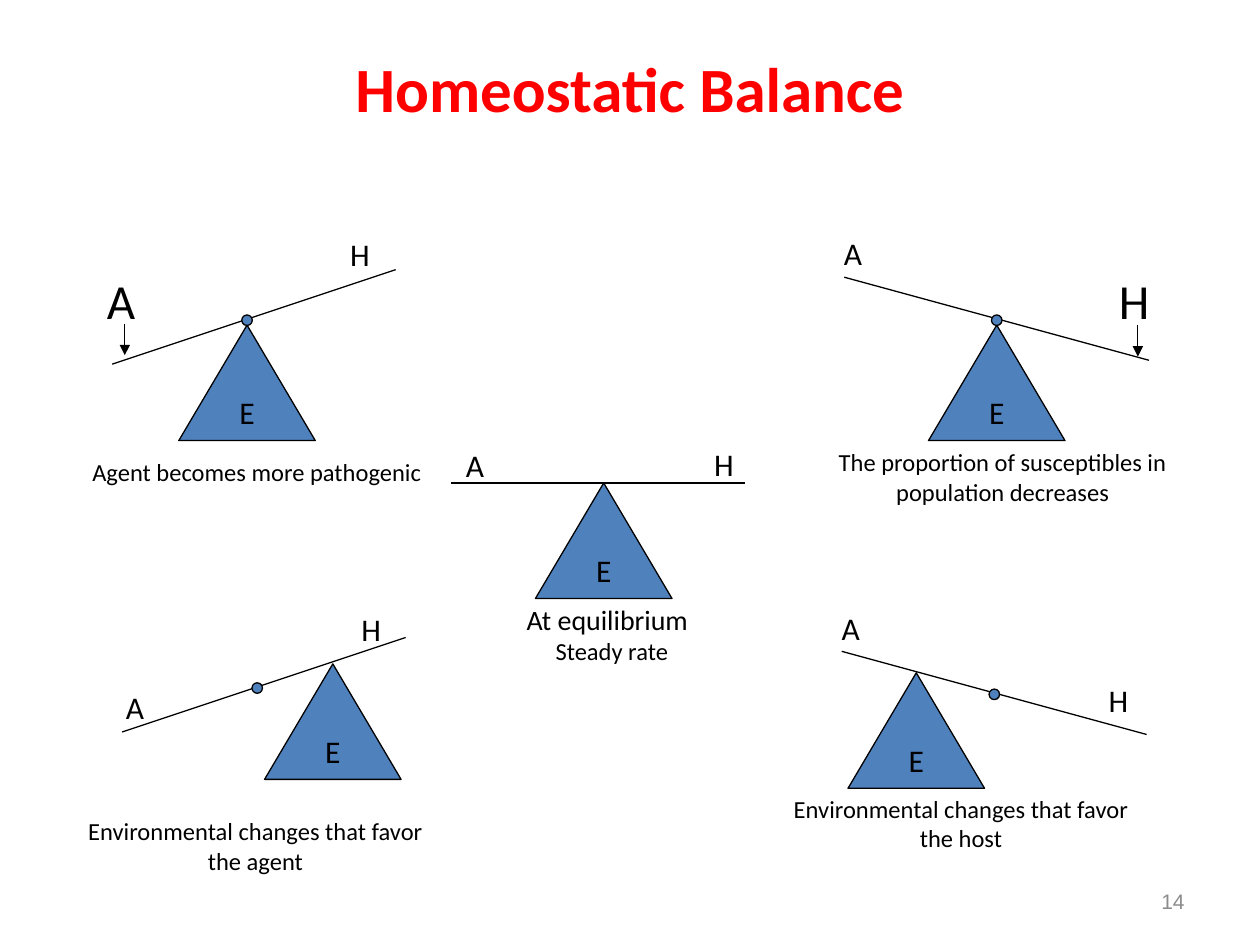
from lxml.etree import SubElement
from pptx import Presentation
from pptx.dml.color import RGBColor
from pptx.enum.shapes import MSO_CONNECTOR as Connector, MSO_SHAPE as Shape
from pptx.enum.text import MSO_ANCHOR as Anchor, MSO_AUTO_SIZE as AutoSize, PP_ALIGN as Align
from pptx.oxml.ns import qn
from pptx.util import Pt

COLORS = {"title": "FF0000", "ink": "000000", "fulcrum": "4F81BD", "number": "8C8C8C"}

# Beam run and rise for each tilt, in points
TILTS = {"agent": (162, -54), "level": (168, 0), "host": (174.2, 47.5)}
LABEL_SIZES = {("A", 18): (26.6, 28.8), ("H", 18): (27.4, 28.8),
               ("A", 28): (33.1, 41), ("H", 28): (34.6, 41)}

# Positions are left, top; labels are letter, left, top, size; captions are
# left, top, width and lines of text, size, alignment
BALANCES = [
    {"triangle": (306, 276), "tilt": "level", "beam": (258, 276),
     "labels": [("A", 259.2, 251.3, 18), ("H", 401, 250.6, 18)],
     "caption": (293.8, 340.6, 111.6,
                 [("At equilibrium", 16, Align.LEFT), ("Steady rate", 14, Align.CENTER)])},
    {"triangle": (530.6, 185.8), "tilt": "host", "beam": (482.4, 158.4),
     "pivot": (566.6, 180), "arrow": (650.2, 185.8),
     "labels": [("A", 475.2, 130.3, 18), ("H", 632.2, 151.2, 28)],
     "caption": (468, 252, 210, [("The proportion of susceptibles in population decreases",
                                  14, Align.CENTER)])},
    {"triangle": (151.2, 379.4), "tilt": "agent", "beam": (69.8, 418.3),
     "pivot": (144, 390.2),
     "labels": [("A", 64.8, 389.5, 18), ("H", 199.4, 344.9, 18)],
     "caption": (41, 463, 210, [("Environmental changes that favor the agent",
                                 14, Align.CENTER)])},
    {"triangle": (484.6, 384.5), "tilt": "host", "beam": (481, 372.2),
     "pivot": (565.2, 393.8),
     "labels": [("A", 473.8, 344.2, 18), ("H", 626.4, 385.9, 18)],
     "caption": (444.2, 450, 210, [("Environmental changes that favor the host",
                                    14, Align.CENTER)])},
    {"triangle": (102.2, 185.8), "tilt": "agent", "beam": (64.1, 208.1),
     "pivot": (138.2, 180), "arrow": (71.3, 185),
     "labels": [("A", 54, 151.2, 28), ("H", 193, 131, 18)],
     "caption": (41.8, 257.8, 210, [("Agent becomes more pathogenic", 14, Align.CENTER)])},
]


def color(name):
    return RGBColor.from_string(COLORS[name])


def write(para, text, size, ink="ink", align=Align.LEFT, name="Calibri", bold=False):
    para.alignment = align
    span = para.add_run()
    span.text = text
    span.font.color.rgb = color(ink)
    for key, value in {"size": Pt(size), "name": name, "bold": bold}.items():
        setattr(span.font, key, value)


def add_text(shapes, left, top, width, height, lines, wrap=True):
    box = shapes.add_textbox(Pt(left), Pt(top), Pt(width), Pt(height))
    frame = box.text_frame
    for key, value in {"word_wrap": wrap, "auto_size": AutoSize.SHAPE_TO_FIT_TEXT}.items():
        setattr(frame, key, value)
    for index, (text, size, align) in enumerate(lines):
        para = frame.add_paragraph() if index else frame.paragraphs[0]
        write(para, text, size, align=align)


def add_solid(shapes, kind, left, top, width, height):
    solid = shapes.add_shape(kind, Pt(left), Pt(top), Pt(width), Pt(height))
    solid.shadow.inherit = False
    solid.fill.solid()
    solid.fill.fore_color.rgb = color("fulcrum")
    solid.line.color.rgb = color("ink")
    solid.line.width = Pt(0.75)
    return solid


def add_line(shapes, left, top, run, rise, arrow=False):
    line = shapes.add_connector(Connector.STRAIGHT, Pt(left), Pt(top),
                                Pt(left + run), Pt(top + rise))
    line.line.color.rgb = color("ink")
    line.line.width = Pt(0.75)
    if arrow:
        SubElement(line.line._get_or_add_ln(), qn("a:tailEnd"), type="triangle")
    SubElement(line._element.spPr, qn("a:effectLst"))


def add_balance(page, balance):
    shapes = page.shapes.add_group_shape().shapes
    # Fulcrum and beam
    fulcrum = add_solid(shapes, Shape.ISOSCELES_TRIANGLE, *balance["triangle"], 78, 66)
    frame = fulcrum.text_frame
    for key, value in {"word_wrap": False, "vertical_anchor": Anchor.MIDDLE}.items():
        setattr(frame, key, value)
    write(frame.paragraphs[0], "E", 18, align=Align.CENTER)
    add_line(shapes, *balance["beam"], *TILTS[balance["tilt"]])
    # Pivot point and weight arrow
    if "pivot" in balance:
        add_solid(shapes, Shape.OVAL, *balance["pivot"], 6, 6)
    if "arrow" in balance:
        add_line(shapes, *balance["arrow"], 0, 18, arrow=True)
    # Agent and host labels, caption
    for letter, left, top, size in balance["labels"]:
        add_text(shapes, left, top, *LABEL_SIZES[letter, size],
                 [(letter, size, Align.LEFT)], wrap=False)
    left, top, width, lines = balance["caption"]
    add_text(shapes, left, top, width, 42, lines)


def add_title(page):
    title = page.shapes.title
    bounds = {"left": 36, "top": 21.6, "width": 648, "height": 56.2}
    for key, value in bounds.items():
        setattr(title, key, Pt(value))
    title.text_frame.vertical_anchor = Anchor.MIDDLE
    write(title.text_frame.paragraphs[0], "Homeostatic Balance", 36, "title",
          Align.CENTER, bold=True)


def add_page_number(page):
    box = page.shapes.add_textbox(Pt(516), Pt(500.5), Pt(168), Pt(28.8))
    box.text_frame.word_wrap = True
    box.text_frame.vertical_anchor = Anchor.MIDDLE
    write(box.text_frame.paragraphs[0], "14", 12, "number", Align.RIGHT, "Arial")


def main():
    deck = Presentation()
    deck.slide_width, deck.slide_height = Pt(720), Pt(540)
    page = deck.slides.add_slide(deck.slide_layouts[5])
    add_page_number(page)
    add_title(page)
    for balance in BALANCES:
        add_balance(page, balance)
    deck.save("out.pptx")


if __name__ == "__main__":
    main()
